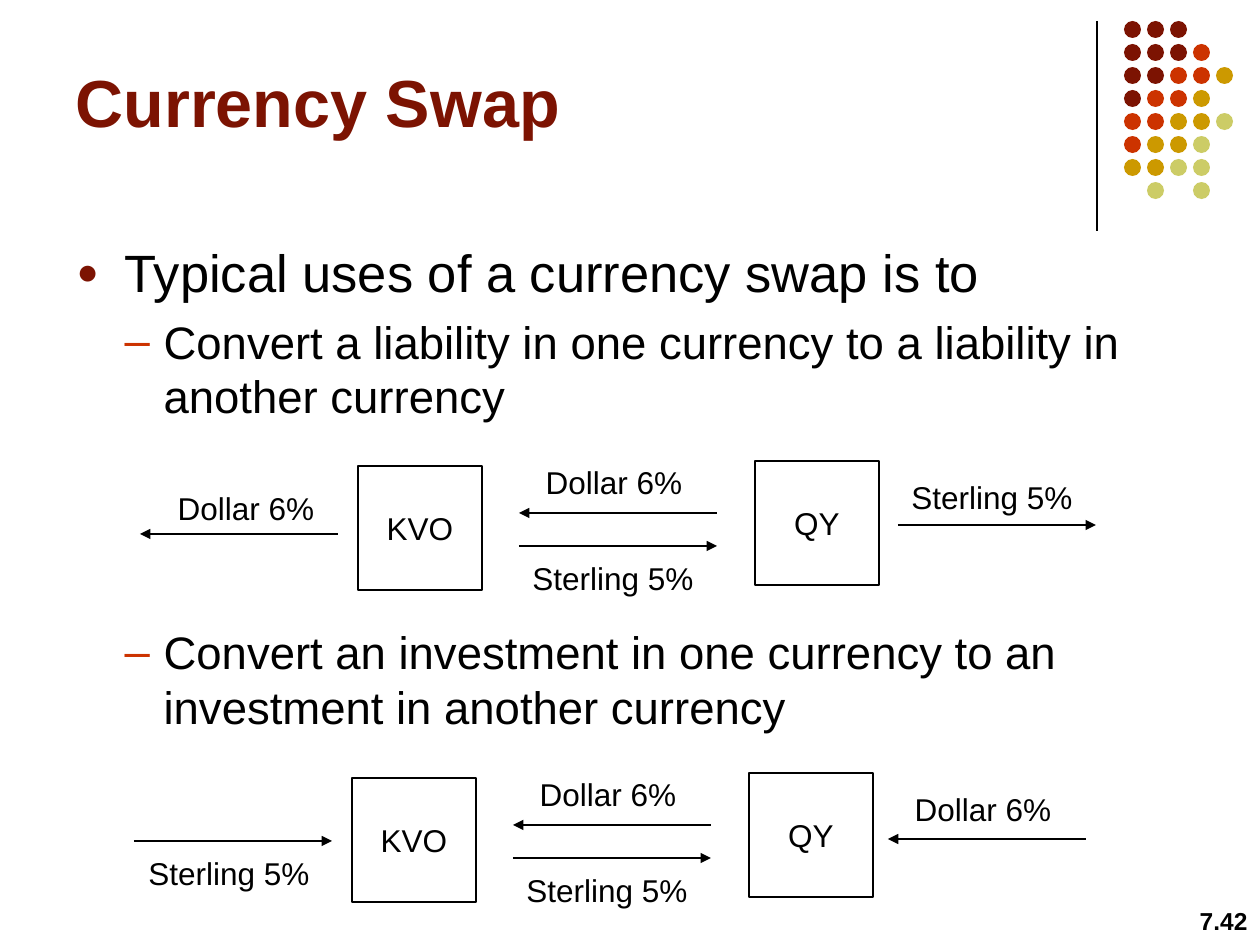
"""Build the currency swap slide with its two payment diagrams."""
import pptx
import pptx.util
import pptx.dml.color
import pptx.enum.shapes
import pptx.enum.text
import pptx.oxml.ns
import lxml.etree

RGB = pptx.dml.color.RGBColor
Pt = pptx.util.Pt
Kind = pptx.enum.shapes.MSO_SHAPE
Align = pptx.enum.text.PP_ALIGN
Anchor = pptx.enum.text.MSO_ANCHOR
Fit = pptx.enum.text.MSO_AUTO_SIZE
qn = pptx.oxml.ns.qn

BLACK = RGB(0x00, 0x00, 0x00)
MAROON = RGB(0x7C, 0x13, 0x02)
RED = RGB(0xCC, 0x33, 0x00)
GOLD = RGB(0xCC, 0x99, 0x00)
OLIVE = RGB(0xCC, 0xCC, 0x66)
FONT = "Arial"
SCALE = 914400 / 126

TITLE = "Currency Swap"
NUMBER = "7.42"
DOTS = ["MMM", "MMMR", "MMRRG", "MRRG", "RRGGO", "RGGO", "GGOO", " O O"]
DOT_INKS = {"M": MAROON, "R": RED, "G": GOLD, "O": OLIVE}
DOT_LEFT, DOT_TOP, DOT_SIZE, DOT_STEP = 1124, 21, 17, 23

LEVELS = [
    {"size": 30, "margin": 48, "indent": -48, "mark": "●", "ink": MAROON, "scale": 70},
    {"size": 26, "margin": 87, "indent": -39, "mark": "–", "ink": RED, "scale": 100},
]
BULLETS = [
    (0, 4, "Typical uses of a currency swap is to"),
    (1, 6, "Convert a liability in one currency to a liability in another currency"),
    (1, 115, "Convert an investment in one currency to an investment in another currency"),
]

SIDE, REACH, LABEL_HIGH = 124, 198, 50
FIRMS = [("KVO", 358, 466), ("QY", 755, 461)]
DOLLAR, STERLING = ("Dollar 6%", 164), ("Sterling 5%", 188)
MIDDLE = [("left", 519, 513, DOLLAR, 532, 457), ("right", 519, 546, STERLING, 519, 553)]
SWAPS = [
    (0, 0, [("left", 140, 534, DOLLAR, 164, 483),
            ("right", 898, 525, STERLING, 898, 472)]),
    (-6, 312, [("right", 140, 529, STERLING, 141, 536),
               ("left", 894, 527, DOLLAR, 907, 472)]),
]


def emu(*px):
    return [round(n * SCALE) for n in px]


def style(para, size, ink=BLACK, bold=False, align=Align.LEFT):
    para.alignment = align
    for run in para.runs:
        run.font.name = FONT
        run.font.size = Pt(size)
        run.font.bold = bold
        run.font.color.rgb = ink


def place(shape, *px):
    shape.left, shape.top, shape.width, shape.height = emu(*px)


def bullet(para, level):
    props = para._p.get_or_add_pPr()
    margin, indent = emu(level["margin"], level["indent"])
    props.set("marL", str(margin))
    props.set("indent", str(indent))
    ink = lxml.etree.SubElement(props, qn("a:buClr"))
    lxml.etree.SubElement(ink, qn("a:srgbClr"), val=str(level["ink"]))
    lxml.etree.SubElement(props, qn("a:buSzPct"), val=str(level["scale"] * 1000))
    lxml.etree.SubElement(props, qn("a:buFont"), typeface=FONT)
    lxml.etree.SubElement(props, qn("a:buChar"), char=level["mark"])


def draw_line(slide, start, end, width, arrow=False):
    line = slide.shapes.add_connector(
        pptx.enum.shapes.MSO_CONNECTOR.STRAIGHT, *emu(*start, *end))
    line.line.color.rgb = BLACK
    line.line.width = Pt(width)
    if arrow:
        lxml.etree.SubElement(line.line._get_or_add_ln(), qn("a:tailEnd"), type="triangle")
    lxml.etree.SubElement(line._element.spPr, qn("a:effectLst"))


def add_label(slide, text, box, size=18, bold=False, align=Align.CENTER):
    label = slide.shapes.add_textbox(*emu(*box))
    label.text_frame.word_wrap = False
    label.text_frame.text = text
    style(label.text_frame.paragraphs[0], size, bold=bold, align=align)


def add_dots(slide):
    for row, inks in enumerate(DOTS):
        for col, key in enumerate(inks):
            if key in DOT_INKS:
                dot = slide.shapes.add_shape(Kind.OVAL, *emu(
                    DOT_LEFT + col * DOT_STEP, DOT_TOP + row * DOT_STEP, DOT_SIZE, DOT_SIZE))
                dot.shadow.inherit = False
                dot.fill.solid()
                dot.fill.fore_color.rgb = DOT_INKS[key]
                dot.line.fill.background()


def add_title(slide):
    title = slide.shapes.title
    place(title, 63, 36, 1033, 129)
    frame = title.text_frame
    frame.text = TITLE
    frame.auto_size = Fit.NONE
    frame.vertical_anchor = Anchor.MIDDLE
    style(frame.paragraphs[0], 38, MAROON, True)


def add_body(slide):
    body = slide.placeholders[1]
    place(body, 64, 234, 1132, 674)
    frame = body.text_frame
    frame.text = "\n".join(text for _, _, text in BULLETS)
    frame.auto_size = Fit.NONE
    for para, (depth, gap, _) in zip(frame.paragraphs, BULLETS):
        para.level = depth
        para.space_before = Pt(gap)
        style(para, LEVELS[depth]["size"])
        bullet(para, LEVELS[depth])


def add_swap(slide, dx, dy, flows):
    for name, left, top in FIRMS:
        firm = slide.shapes.add_shape(Kind.RECTANGLE, *emu(left + dx, top + dy, SIDE, SIDE))
        firm.shadow.inherit = False
        firm.fill.background()
        firm.line.color.rgb = BLACK
        firm.line.width = Pt(1)
        firm.text_frame.text = name
        firm.text_frame.vertical_anchor = Anchor.MIDDLE
        style(firm.text_frame.paragraphs[0], 18, align=Align.CENTER)
    for way, left, y, (text, wide), label_x, label_y in MIDDLE + flows:
        ends = [(left + dx, y + dy), (left + REACH + dx, y + dy)]
        start, end = ends if way == "right" else reversed(ends)
        draw_line(slide, start, end, 1.5, True)
        add_label(slide, text, (label_x + dx, label_y + dy, wide, LABEL_HIGH))


def main():
    deck = pptx.Presentation()
    deck.slide_width, deck.slide_height = emu(1260, 945)
    slide = deck.slides.add_slide(deck.slide_layouts[1])
    draw_line(slide, (1097, 21), (1097, 231), 0.75)
    add_dots(slide)
    add_title(slide)
    add_body(slide)
    for swap in SWAPS:
        add_swap(slide, *swap)
    add_label(slide, NUMBER, (1169, 900, 91, 45), 14, True, Align.RIGHT)
    deck.save("out.pptx")


if __name__ == "__main__":
    main()
